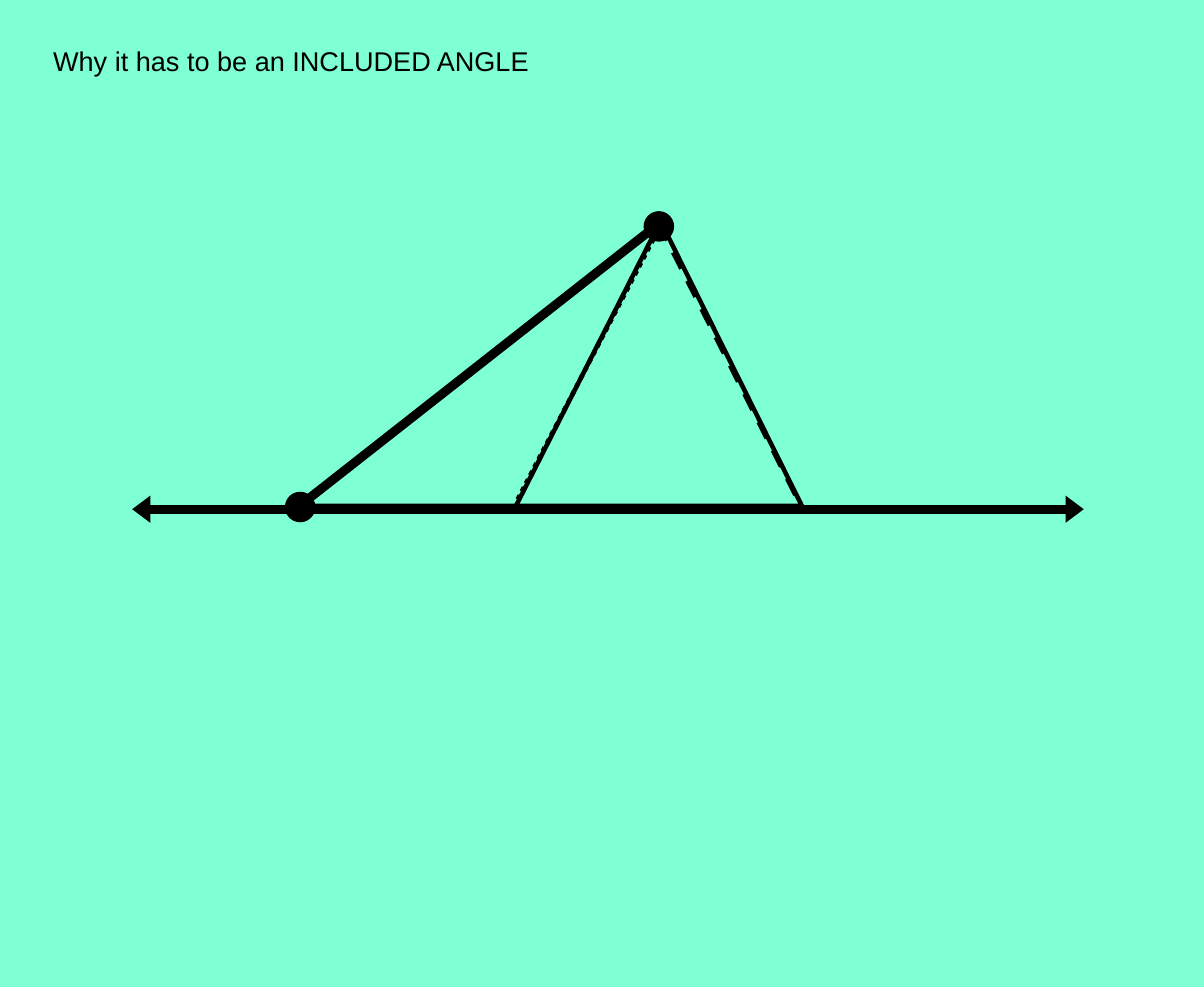
from pptx import Presentation
from pptx.dml.color import RGBColor
from pptx.enum.dml import MSO_LINE
from pptx.enum.shapes import MSO_CONNECTOR, MSO_SHAPE
from pptx.enum.text import MSO_ANCHOR, MSO_AUTO_SIZE, PP_ALIGN
from pptx.oxml.ns import qn
from pptx.util import Inches, Pt
from lxml.etree import SubElement

TITLE = "Why it has to be an INCLUDED ANGLE"
TITLE_BOX = (39, 36, 618, 40)
BLACK, AQUAMARINE = "000000", "7FFFD4"
THICK, THIN = 6, 3

BASE_LINE = ((122, 470), (1000, 470))
FIXED_SIDE = ((275, 468), (606, 208))
VERTICES = [(277, 468), (608, 209)]
VERTEX_SIZE = 24
SWINGING_SIDES = [
    ((608, 207), (740, 469), MSO_LINE.DASH),
    ((607, 213), (476, 464), MSO_LINE.ROUND_DOT),
]
TRIANGLES = [
    [(608, 207), (474, 471), (269, 471)],
    [(610, 205), (740, 467), (278, 467)],
]


def grid(*cells):
    return [Inches(cell / 100) for cell in cells]


def color(hex_code):
    return RGBColor.from_string(hex_code)


def set_outline(shape, weight):
    shape.line.color.rgb = color(BLACK)
    shape.line.width = Pt(weight)


def add_segment(shapes, start, end, weight):
    segment = shapes.add_connector(MSO_CONNECTOR.STRAIGHT, *grid(*start, *end))
    set_outline(segment, weight)
    SubElement(segment._element.spPr, qn("a:effectLst"))
    return segment


def add_arrowheads(segment):
    outline = segment.line._get_or_add_ln()
    for end in ("a:headEnd", "a:tailEnd"):
        SubElement(outline, qn(end), type="triangle", w="med", len="sm")


def add_vertex(shapes, center):
    left, top = (position - VERTEX_SIZE / 2 for position in center)
    vertex = shapes.add_shape(
        MSO_SHAPE.OVAL, *grid(left, top, VERTEX_SIZE, VERTEX_SIZE))
    vertex.shadow.inherit = False
    vertex.fill.solid()
    vertex.fill.fore_color.rgb = color(BLACK)
    set_outline(vertex, THIN)


def add_triangle(shapes, corners):
    first, *others = [grid(*corner) for corner in corners]
    builder = shapes.build_freeform(*first)
    builder.add_line_segments(others, close=True)
    triangle = builder.convert_to_shape()
    triangle.shadow.inherit = False
    triangle.fill.background()
    set_outline(triangle, THIN)


def format_title(title):
    title.left, title.top, title.width, title.height = grid(*TITLE_BOX)
    frame = title.text_frame
    frame.word_wrap = True
    frame.auto_size = MSO_AUTO_SIZE.SHAPE_TO_FIT_TEXT
    frame.vertical_anchor = MSO_ANCHOR.TOP
    paragraph = frame.paragraphs[0]
    paragraph.alignment = PP_ALIGN.LEFT
    run = paragraph.add_run()
    run.text = TITLE
    run.font.name = "Arial"
    run.font.size = Pt(18)
    run.font.color.rgb = color(BLACK)


def main():
    presentation = Presentation()
    presentation.slide_width, presentation.slide_height = grid(1111, 911)
    slide = presentation.slides.add_slide(presentation.slide_layouts[5])
    slide.background.fill.solid()
    slide.background.fill.fore_color.rgb = color(AQUAMARINE)
    shapes = slide.shapes

    format_title(shapes.title)
    add_arrowheads(add_segment(shapes, *BASE_LINE, THICK))
    add_segment(shapes, *FIXED_SIDE, THICK)
    for center in VERTICES:
        add_vertex(shapes, center)
    swinging_group = shapes.add_group_shape()
    for start, end, dash in SWINGING_SIDES:
        side = add_segment(swinging_group.shapes, start, end, THIN)
        side.line.dash_style = dash
    for corners in TRIANGLES:
        add_triangle(shapes, corners)

    presentation.save("out.pptx")


if __name__ == "__main__":
    main()
